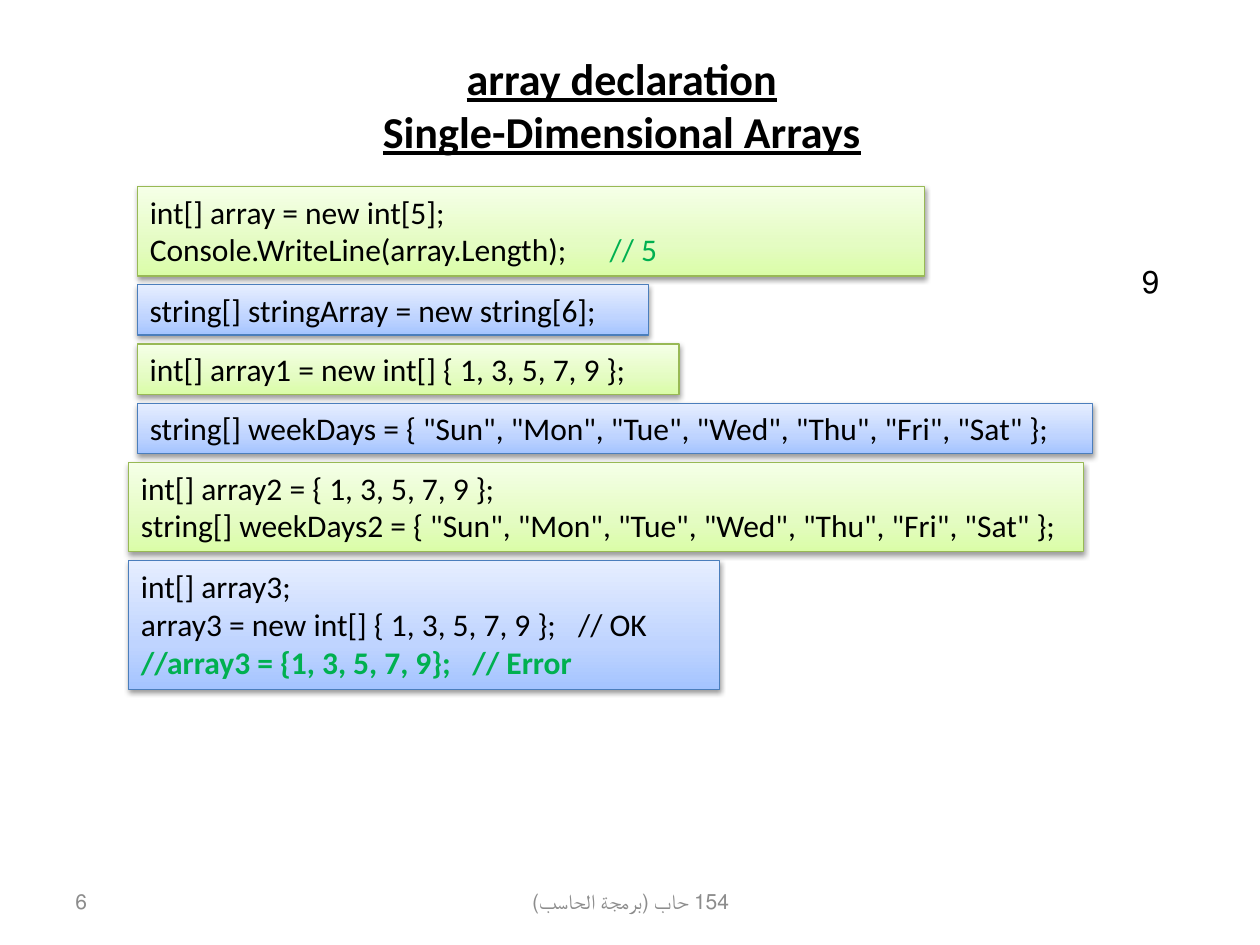
from lxml import etree
from pptx import Presentation
from pptx.dml.color import RGBColor
from pptx.enum.shapes import MSO_SHAPE
from pptx.enum.text import MSO_ANCHOR, MSO_AUTO_SIZE, PP_ALIGN
from pptx.oxml import parse_xml
from pptx.oxml.ns import nsdecls, qn
from pptx.util import Inches, Pt

RECT = MSO_SHAPE.RECTANGLE
TOP, MIDDLE = MSO_ANCHOR.TOP, MSO_ANCHOR.MIDDLE
LEFT, CENTER, RIGHT = PP_ALIGN.LEFT, PP_ALIGN.CENTER, PP_ALIGN.RIGHT
NO_FIT = MSO_AUTO_SIZE.NONE

COLORS = {"black": "000000", "gray": "8C8C8C", "comment": "00B050"}
THEMES = {
    "green": {"line": "98B955", "stops": [(0, "DAFDA7"), (35, "E4FCC2"), (100, "F5FFE7")]},
    "blue": {"line": "4B7EBC", "stops": [(0, "A4C4FF"), (35, "BFD4FF"), (100, "E6EEFF")]},
}

TITLE = ["array declaration", "Single-Dimensional Arrays"]
LABELS = [
    ("9", (0.94, 2.03, 8.36, 0.4), {"size": 18, "font": "Arial", "align": RIGHT}),
    ("6", (0.5, 6.95, 2.33, 0.4), {"size": 12, "color": "gray", "align": LEFT}),
    ("154 حاب (برمجة الحاسب)", (3.42, 6.95, 3.17, 0.4),
     {"size": 12, "color": "gray", "align": CENTER}),
]

GREEN_TEXT = {"color": "comment"}
ERROR_TEXT = {"color": "comment", "bold": True}
SNIPPETS = [
    {"theme": "green", "left": 1.09, "width": 6.25, "tabs": {1: 3.65}, "lines": [
        "int[] array = new int[5];",
        [("Console.WriteLine(array.Length);\t", {}), ("// 5", GREEN_TEXT)]]},
    {"theme": "blue", "left": 1.09, "width": 4.06, "lines": [
        "string[] stringArray = new string[6];"]},
    {"theme": "green", "left": 1.09, "width": 4.3, "lines": [
        "int[] array1 = new int[] { 1, 3, 5, 7, 9 };"]},
    {"theme": "blue", "left": 1.09, "width": 7.58, "lines": [
        'string[] weekDays = { "Sun", "Mon", "Tue", "Wed", "Thu", "Fri", "Sat" };']},
    {"theme": "green", "left": 1.02, "width": 7.58, "lines": [
        "int[] array2 = { 1, 3, 5, 7, 9 };",
        'string[] weekDays2 = { "Sun", "Mon", "Tue", "Wed", "Thu", "Fri", "Sat" };']},
    {"theme": "blue", "left": 1.02, "width": 4.69, "tabs": {1: 3.47, 2: 2.63}, "lines": [
        "int[] array3;",
        "array3 = new int[] { 1, 3, 5, 7, 9 };\t// OK",
        [("//array3 = {1, 3, 5, 7, 9};\t// Error", ERROR_TEXT)]]},
]
FIRST_TOP, GAP, ONE_LINE, EXTRA_LINE = 1.48, 0.07, 0.4, 0.31


def write(sp, lines, size=18, font="Calibri", color="black", bold=False,
          underline=False, align=LEFT, anchor=TOP, rtl=False, tabs=None):
    tf = sp.text_frame
    tf.word_wrap, tf.auto_size, tf.vertical_anchor = True, NO_FIT, anchor
    for i, line in enumerate(lines):
        p = tf.paragraphs[0] if i == 0 else tf.add_paragraph()
        p.alignment = align
        pPr = p._p.get_or_add_pPr()
        if rtl:
            pPr.set("rtl", "1")
        if tabs and i in tabs:
            tab_list = etree.SubElement(pPr, qn("a:tabLst"))
            etree.SubElement(tab_list, qn("a:tab"), pos=str(Inches(tabs[i])), algn="l")
        for text, style in [(line, {})] if isinstance(line, str) else line:
            r = p.add_run()
            r.text = text
            r.font.size, r.font.name = Pt(size), font
            r.font.bold = style.get("bold", bold)
            r.font.underline = underline
            r.font.color.rgb = RGBColor.from_string(COLORS[style.get("color", color)])


def paint(sp, theme):
    sp.line.color.rgb = RGBColor.from_string(theme["line"])
    sp.line.width = Pt(0.75)
    stops = "".join(f'<a:gs pos="{pos * 1000}"><a:srgbClr val="{color}"/></a:gs>'
                    for pos, color in theme["stops"])
    spPr = sp._element.spPr
    spPr.find(qn("a:prstGeom")).addnext(parse_xml(
        f'<a:gradFill {nsdecls("a")} rotWithShape="1"><a:gsLst>{stops}</a:gsLst>'
        '<a:lin ang="16200000" scaled="0"/></a:gradFill>'))
    sp.shadow.inherit = False
    spPr.find(qn("a:effectLst")).append(parse_xml(
        f'<a:outerShdw {nsdecls("a")} blurRad="{Pt(3.1)}" dist="{Pt(1.6)}" dir="5400000" '
        'rotWithShape="0"><a:srgbClr val="000000"><a:alpha val="38000"/></a:srgbClr>'
        '</a:outerShdw>'))


def main():
    """Build the array declaration slide."""
    prs = Presentation()
    prs.slide_width, prs.slide_height = Inches(10), Inches(7.5)
    s = prs.slides.add_slide(prs.slide_layouts[5])

    title = s.shapes.title
    title.left, title.top = Inches(1.41), Inches(0.47)
    title.width, title.height = Inches(7.05), Inches(1.09)
    title.text_frame.margin_top, title.text_frame.margin_bottom = 0, Inches(0.37)
    write(title, TITLE, size=25.2, bold=True, underline=True, align=CENTER, anchor=MIDDLE)

    for text, box, style in LABELS:
        sp = s.shapes.add_textbox(*map(Inches, box))
        write(sp, [text], anchor=MIDDLE, rtl=True, **style)

    top = FIRST_TOP
    for snippet in SNIPPETS:
        lines = snippet["lines"]
        height = ONE_LINE + EXTRA_LINE * (len(lines) - 1)
        sp = s.shapes.add_shape(RECT, Inches(snippet["left"]), Inches(top),
                                Inches(snippet["width"]), Inches(height))
        paint(sp, THEMES[snippet["theme"]])
        write(sp, lines, tabs=snippet.get("tabs"))
        top += height + GAP

    prs.save("out.pptx")


if __name__ == "__main__":
    main()
